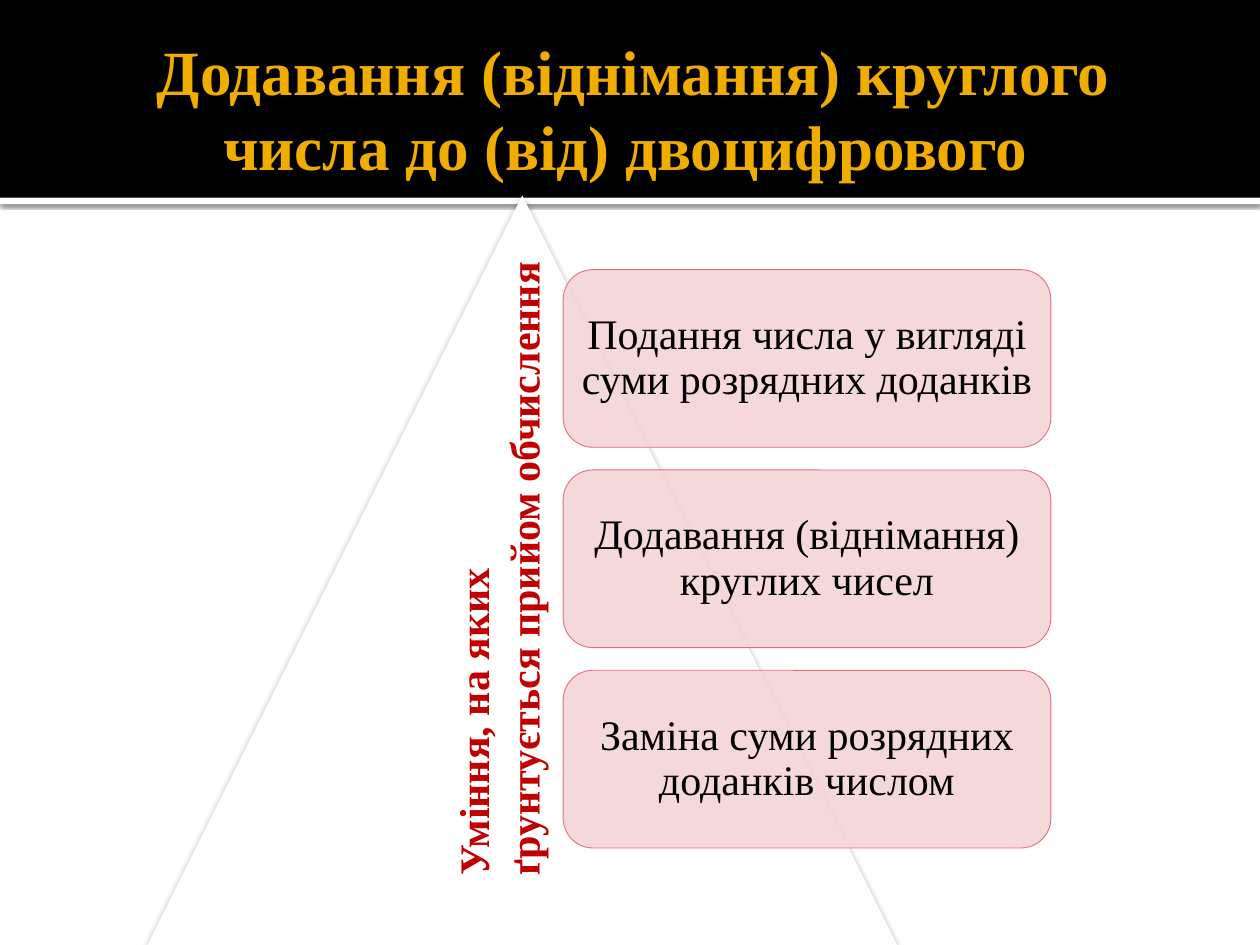
from dataclasses import dataclass

from lxml import etree
from pptx import Presentation
from pptx.dml.color import RGBColor
from pptx.enum.shapes import MSO_SHAPE
from pptx.enum.text import MSO_ANCHOR, PP_ALIGN
from pptx.oxml.ns import qn
from pptx.util import Inches, Pt

RECTANGLE = MSO_SHAPE.RECTANGLE
TRIANGLE = MSO_SHAPE.ISOSCELES_TRIANGLE
ROUNDED = MSO_SHAPE.ROUNDED_RECTANGLE
MIDDLE, TOP = MSO_ANCHOR.MIDDLE, MSO_ANCHOR.TOP
CENTER, LEFT = PP_ALIGN.CENTER, PP_ALIGN.LEFT


@dataclass(frozen=True)
class Theme:
    font: str = "Times New Roman"
    title_size: int = 36
    body_size: int = 24
    black: str = "000000"
    white: str = "FFFFFF"
    gold: str = "F0AD00"
    red: str = "C00000"
    card_fill: str = "F5D4D7"
    card_line: str = "E66C7D"


THEME = Theme()

TITLE = "Додавання (віднімання) круглого числа до (від) двоцифрового "
CAPTION = ["Уміння, на яких", "ґрунтується прийом обчислення"]
SKILLS = [
    "Подання числа у вигляді суми розрядних доданків",
    "Додавання (віднімання) круглих чисел",
    "Заміна суми розрядних доданків числом",
]

SLIDE_WIDTH, SLIDE_HEIGHT = 10, 7.5
HEADER_HEIGHT = 1.57
CARD_LEFT, CARD_TOP, CARD_WIDTH, CARD_HEIGHT = 4.47, 2.14, 3.87, 1.41
CARD_PITCH = 1.59


def add_filled_shape(slide, kind, box, fill):
    shape = slide.shapes.add_shape(kind, *map(Inches, box))
    shape.shadow.inherit = False
    shape.fill.solid()
    shape.fill.fore_color.rgb = RGBColor.from_string(fill)
    shape.line.fill.background()
    return shape


def add_drop_shadow(shape, opacity, blur, distance):
    effects = shape._element.spPr.find(qn("a:effectLst"))
    shadow = etree.SubElement(
        effects, qn("a:outerShdw"), blurRad=str(Pt(blur)),
        dist=str(Pt(distance)), dir="5400000", algn="t", rotWithShape="0")
    color = etree.SubElement(shadow, qn("a:srgbClr"), val=THEME.black)
    etree.SubElement(color, qn("a:alpha"), val=str(opacity * 1000))


def set_fill_opacity(shape, percent):
    color = shape._element.spPr.find(qn("a:solidFill"))[0]
    etree.SubElement(color, qn("a:alpha"), val=str(percent * 1000))


def write_text(shape, lines, size, color, bold=False, align=CENTER,
               anchor=MIDDLE, insets=(0.1, 0.05, 0.1, 0.05), spacing=1.0):
    frame = shape.text_frame
    frame.word_wrap = True
    frame.vertical_anchor = anchor
    (frame.margin_left, frame.margin_top,
     frame.margin_right, frame.margin_bottom) = map(Inches, insets)
    for index, line in enumerate(lines):
        paragraph = frame.add_paragraph() if index else frame.paragraphs[0]
        paragraph.alignment = align
        paragraph.line_spacing = spacing
        run = paragraph.add_run()
        run.text = line
        run.font.name = THEME.font
        run.font.size = Pt(size)
        run.font.bold = bold
        run.font.color.rgb = RGBColor.from_string(color)


def add_header(slide):
    rule = add_filled_shape(
        slide, RECTANGLE, (0, HEADER_HEIGHT, SLIDE_WIDTH, 0.05), THEME.white)
    add_drop_shadow(rule, 60, 2.5, 0.8)
    add_filled_shape(
        slide, RECTANGLE, (0, 0, SLIDE_WIDTH, HEADER_HEIGHT), THEME.black)

    title = slide.shapes.title
    title.left, title.top, title.width, title.height = map(
        Inches, (0.5, 0.17, 9, 1.37))
    write_text(title, [TITLE], THEME.title_size, THEME.gold, bold=True,
               insets=(0.1, 0.05, 0.05, 0.05))
    slide.shapes._spTree.append(title._element)  # bring in front of the band


def add_skills(slide):
    triangle = add_filled_shape(
        slide, TRIANGLE, (1.17, 1.55, 5.95, 5.95), THEME.white)
    add_drop_shadow(triangle, 38, 3.5, 2)
    for index, skill in enumerate(SKILLS):
        top = CARD_TOP + index * CARD_PITCH
        card = add_filled_shape(
            slide, ROUNDED, (CARD_LEFT, top, CARD_WIDTH, CARD_HEIGHT),
            THEME.card_fill)
        set_fill_opacity(card, 90)
        card.line.color.rgb = RGBColor.from_string(THEME.card_line)
        card.line.width = Pt(0.5)
        write_text(card, [skill], THEME.body_size, THEME.black,
                   insets=(0.03,) * 4, spacing=0.9)


def add_caption(slide):
    caption = slide.shapes.add_textbox(*map(Inches, (3.5, 1.87, 1.01, 5.18)))
    write_text(caption, CAPTION, THEME.body_size, THEME.red, bold=True,
               align=LEFT, anchor=TOP)
    caption.text_frame._txBody.bodyPr.set("vert", "vert270")


def main():
    presentation = Presentation()
    presentation.slide_width = Inches(SLIDE_WIDTH)
    presentation.slide_height = Inches(SLIDE_HEIGHT)
    slide = presentation.slides.add_slide(presentation.slide_layouts[5])
    add_header(slide)
    add_skills(slide)
    add_caption(slide)
    presentation.save("out.pptx")


if __name__ == "__main__":
    main()
